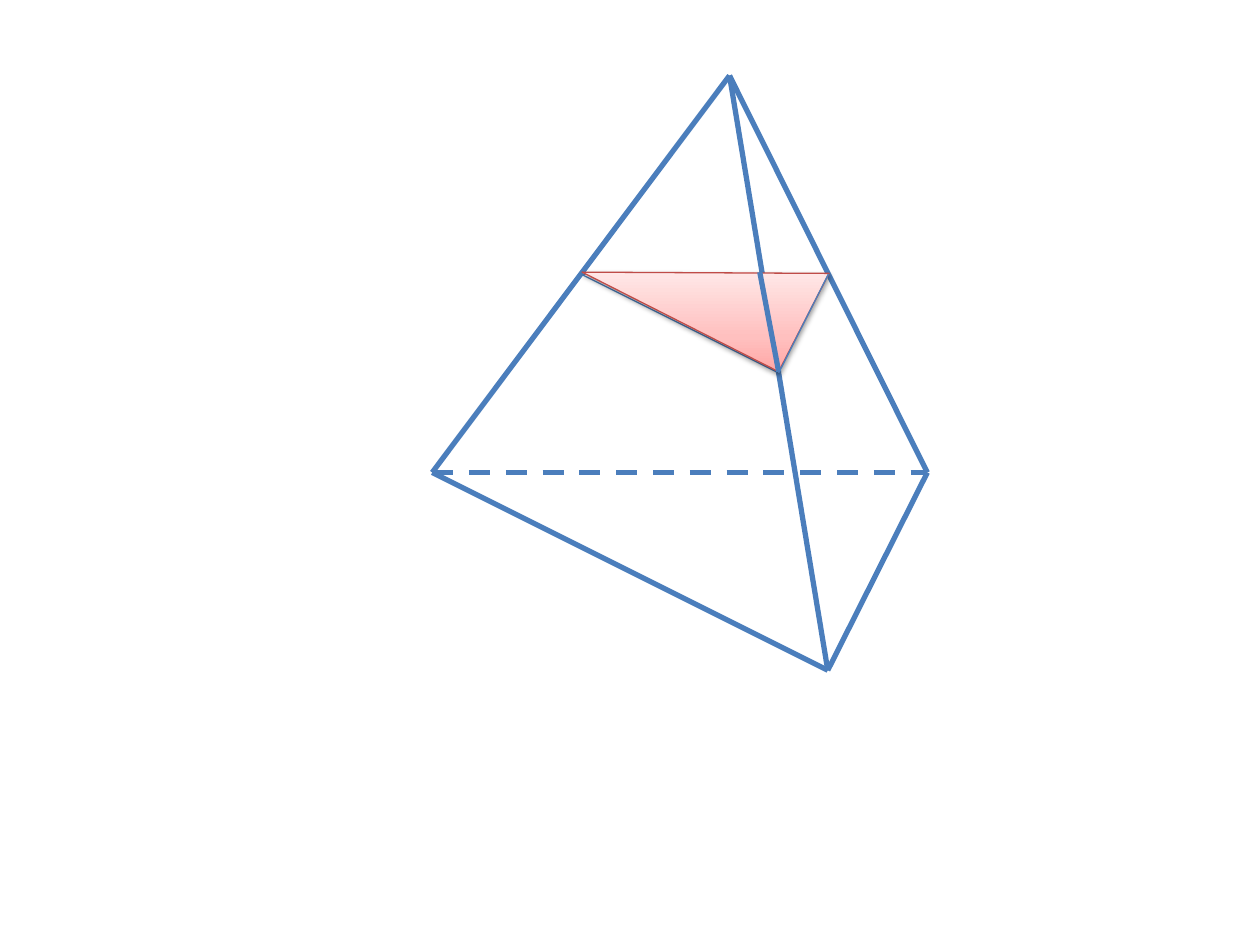
from copy import deepcopy
from dataclasses import dataclass
from typing import NamedTuple

from lxml import etree
from pptx import Presentation
from pptx.dml.color import RGBColor
from pptx.enum.dml import MSO_LINE
from pptx.enum.shapes import MSO_CONNECTOR
from pptx.oxml.ns import qn
from pptx.slide import Slide
from pptx.util import Inches, Pt

STRAIGHT = MSO_CONNECTOR.STRAIGHT
DASH = MSO_LINE.DASH
BLANK_LAYOUT = 6


@dataclass(frozen=True)
class Theme:
    edge: RGBColor = RGBColor.from_string("4B7EBC")
    section_outline: RGBColor = RGBColor.from_string("BF4C48")
    section_stops: tuple[tuple[float, str], ...] = (
        (0, "FFA6A5"), (0.35, "FFC0BF"), (1, "FFE7E7"))
    shadow: str = "000000"
    thick: float = 3
    thin: float = 0.75


class Point(NamedTuple):
    x: float
    y: float


class Edge(NamedTuple):
    start: Point
    end: Point
    width: float
    dashed: bool = False


THEME = Theme()
APEX = Point(5.79, 0.6)
LEFT = Point(3.43, 3.75)
RIGHT = Point(7.36, 3.75)
FRONT = Point(6.57, 5.32)
SECTION = (Point(4.62, 2.16), Point(6.58, 2.17), Point(6.18, 2.95))


def midpoint(first: Point, second: Point) -> Point:
    return Point((first.x + second.x) / 2, (first.y + second.y) / 2)


def draw_edge(slide: Slide, edge: Edge) -> None:
    line = slide.shapes.add_connector(
        STRAIGHT, Inches(edge.start.x), Inches(edge.start.y),
        Inches(edge.end.x), Inches(edge.end.y))
    line.line.color.rgb = THEME.edge
    line.line.width = Pt(edge.width)
    if edge.dashed:
        line.line.dash_style = DASH
    etree.SubElement(line._element.spPr, qn("a:effectLst"))


def draw_section(slide: Slide, corners: tuple[Point, ...]) -> None:
    start, *others = [(Inches(corner.x), Inches(corner.y)) for corner in corners]
    builder = slide.shapes.build_freeform(*start)
    builder.add_line_segments(others, close=True)
    section = builder.convert_to_shape()
    section.line.color.rgb = THEME.section_outline
    section.line.width = Pt(THEME.thin)

    section.fill.gradient()
    section.fill.gradient_angle = 90
    properties = section._element.spPr
    stop_list = properties.find(qn("a:gradFill")).find(qn("a:gsLst"))
    stop_list.insert(1, deepcopy(stop_list[0]))
    for stop, (position, color) in zip(section.fill.gradient_stops, THEME.section_stops):
        stop.position = position
        stop.color.rgb = RGBColor.from_string(color)

    section.shadow.inherit = False
    shadow = etree.SubElement(
        properties.find(qn("a:effectLst")), qn("a:outerShdw"),
        blurRad=str(Pt(3.1)), dist=str(Pt(1.6)), dir="5400000", rotWithShape="0")
    color = etree.SubElement(shadow, qn("a:srgbClr"), val=THEME.shadow)
    etree.SubElement(color, qn("a:alpha"), val="38000")


def main() -> None:
    deck = Presentation()
    deck.slide_width, deck.slide_height = Inches(10), Inches(7.5)
    slide = deck.slides.add_slide(deck.slide_layouts[BLANK_LAYOUT])
    left_cut, right_cut, front_cut = (
        midpoint(APEX, corner) for corner in (LEFT, RIGHT, FRONT))

    for edge in (
        Edge(LEFT, RIGHT, THEME.thick, dashed=True),
        Edge(LEFT, FRONT, THEME.thick),
        Edge(FRONT, RIGHT, THEME.thick),
        Edge(APEX, RIGHT, THEME.thick),
        Edge(APEX, LEFT, THEME.thick),
        Edge(APEX, FRONT, THEME.thick),
        Edge(left_cut, front_cut, THEME.thin),
        Edge(left_cut, right_cut, THEME.thin),
    ):
        draw_edge(slide, edge)
    draw_section(slide, SECTION)
    draw_edge(slide, Edge(front_cut, right_cut, THEME.thin))
    draw_edge(slide, Edge(Point(6.03, 2.16), SECTION[-1], THEME.thick))
    deck.save("out.pptx")


if __name__ == "__main__":
    main()
